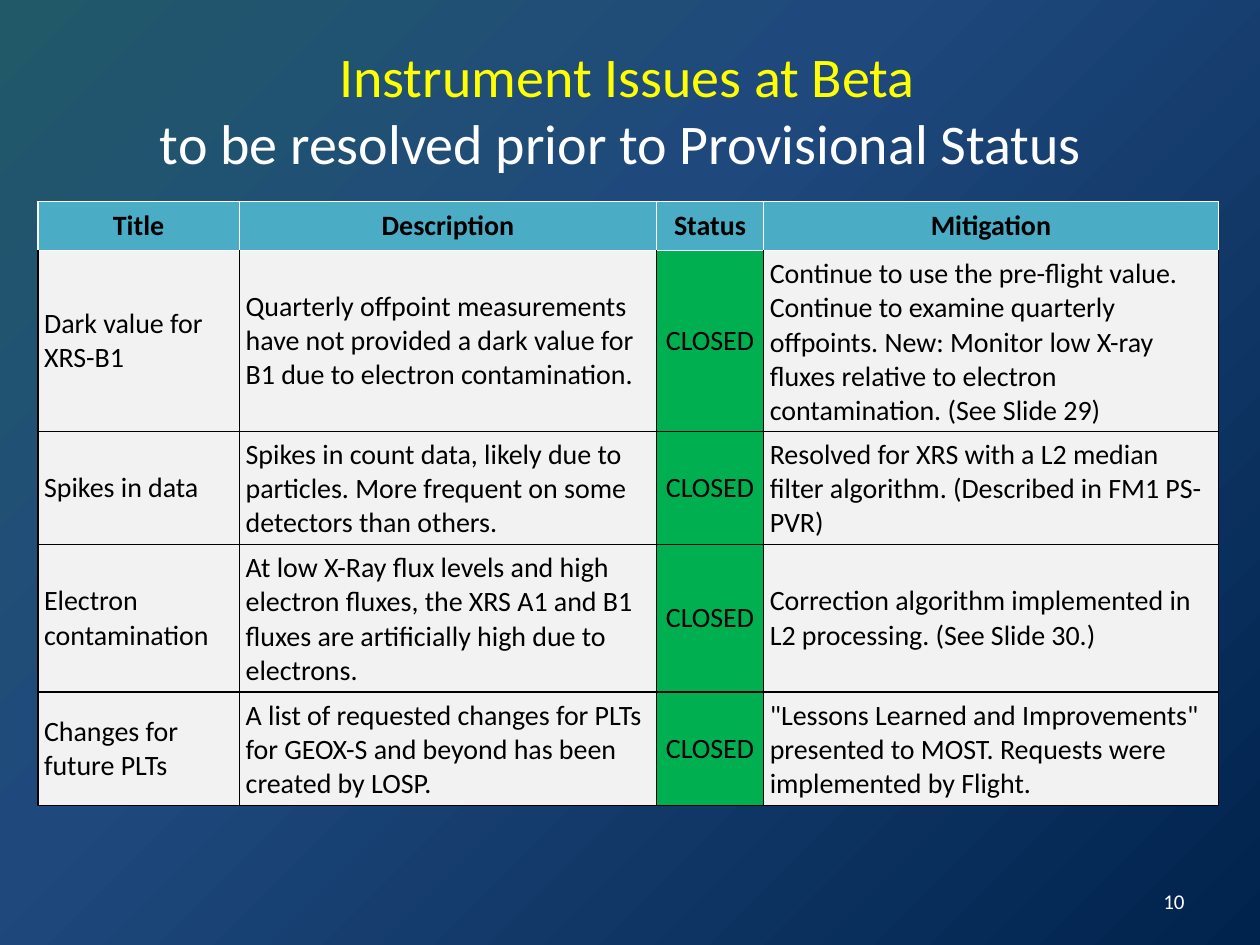
from lxml.etree import SubElement
from pptx import Presentation
from pptx.dml.color import RGBColor
from pptx.enum.text import MSO_ANCHOR, PP_ALIGN
from pptx.oxml.ns import qn
from pptx.util import Inches, Pt

COLORS = {
    "teal": "215968", "blue": "1F497D", "navy": "00234D",
    "yellow": "FFFF00", "white": "FFFFFF", "black": "000000",
    "header": "4BACC6", "body": "F2F2F2", "closed": "00B050",
}
COLUMN_WIDTHS = [16, 33.1, 8.5, 36.1]
ROW_HEIGHTS = [3.9, 14.3, 9, 11.7, 9]
HEADINGS = ["Title", "Description", "Status", "Mitigation"]
STATUS = HEADINGS.index("Status")
ISSUES = [
    ["Dark value for XRS-B1",
     "Quarterly offpoint measurements have not provided a dark value for B1 "
     "due to electron contamination.",
     "CLOSED",
     "Continue to use the pre-flight value. Continue to examine quarterly "
     "offpoints. New: Monitor low X-ray fluxes relative to electron "
     "contamination. (See Slide 29)"],
    ["Spikes in data",
     "Spikes in count data, likely due to particles. More frequent on some "
     "detectors than others.",
     "CLOSED",
     "Resolved for XRS with a L2 median filter algorithm. "
     "(Described in FM1 PS-PVR)"],
    ["Electron contamination",
     "At low X-Ray flux levels and high electron fluxes, the XRS A1 and B1 "
     "fluxes are artificially high due to electrons.",
     "CLOSED",
     "Correction algorithm implemented in L2 processing. (See Slide 30.)"],
    ["Changes for future PLTs",
     "A list of requested changes for PLTs for GEOX-S and beyond has been "
     "created by LOSP.",
     "CLOSED",
     '"Lessons Learned and Improvements" presented to MOST. Requests were '
     "implemented by Flight."],
]


def write(paragraph, text, size=16, color="black", bold=False,
          align=PP_ALIGN.LEFT, font="Calibri"):
    """Write one formatted run into a paragraph."""
    paragraph.alignment = align
    run = paragraph.add_run()
    run.text = text
    run.font.name = font
    run.font.size = Pt(size)
    run.font.bold = bold
    run.font.color.rgb = RGBColor.from_string(COLORS[color])


class IssueSlide:
    """Hold the style and the current slide on a grid of 100 by 75 units."""

    unit = Inches(0.1)
    cell_margin = Inches(0.05)
    border_width = Pt(1)

    def __init__(self, presentation):
        presentation.slide_width = self.span(100)
        presentation.slide_height = self.span(75)
        self.slide = presentation.slides.add_slide(presentation.slide_layouts[6])

    def span(self, units):
        return round(units * self.unit)

    def background(self, stops):
        self.slide.background.fill.gradient()
        gradient = self.slide.element.find(".//" + qn("a:gradFill"))
        for child in list(gradient):
            gradient.remove(child)
        stop_list = SubElement(gradient, qn("a:gsLst"))
        for percent, color in stops:
            stop = SubElement(stop_list, qn("a:gs"), pos=str(percent * 1000))
            SubElement(stop, qn("a:srgbClr"), val=COLORS[color])
        focus = SubElement(gradient, qn("a:path"))
        focus.set("path", "circle")
        SubElement(focus, qn("a:fillToRect"), r="100000", b="100000")

    def text(self, area, lines, **style):
        frame = self.slide.shapes.add_textbox(*map(self.span, area)).text_frame
        frame.word_wrap = True
        frame.vertical_anchor = MSO_ANCHOR.MIDDLE
        for number, (line, color) in enumerate(lines):
            paragraph = frame.add_paragraph() if number else frame.paragraphs[0]
            write(paragraph, line, color=color, **style)

    def borders(self, cell, colors):
        properties = cell._tc.get_or_add_tcPr()
        for side, color in zip("LRTB", colors):
            edge = SubElement(properties, qn(f"a:ln{side}"), w=str(self.border_width))
            fill = SubElement(edge, qn("a:solidFill"))
            SubElement(fill, qn("a:srgbClr"), val=COLORS[color])

    def cell(self, cell, text, fill, borders, **style):
        self.borders(cell, borders)
        cell.fill.solid()
        cell.fill.fore_color.rgb = RGBColor.from_string(COLORS[fill])
        cell.vertical_anchor = MSO_ANCHOR.MIDDLE
        cell.margin_left = cell.margin_right = self.cell_margin
        cell.margin_top = cell.margin_bottom = self.cell_margin
        write(cell.text_frame.paragraphs[0], text, **style)

    def table(self, left, top, widths, heights, headings, records):
        area = map(self.span, (left, top, sum(widths), sum(heights)))
        grid = self.slide.shapes.add_table(len(heights), len(widths), *area).table
        for column, width in zip(grid.columns, widths):
            column.width = self.span(width)
        for row, height in zip(grid.rows, heights):
            row.height = self.span(height)
        for index, heading in enumerate(headings):
            self.cell(grid.cell(0, index), heading, "header", ["white"] * 4,
                      bold=True, align=PP_ALIGN.CENTER)
        for number, record in enumerate(records, 1):
            top_edge = "white" if number == 1 else "black"
            for index, entry in enumerate(record):
                is_status = index == STATUS
                self.cell(grid.cell(number, index), entry,
                          "closed" if is_status else "body",
                          ["black", "black", top_edge, "black"],
                          align=PP_ALIGN.CENTER if is_status else PP_ALIGN.LEFT)


def main():
    presentation = Presentation()
    issues = IssueSlide(presentation)
    issues.background([(0, "teal"), (40, "blue"), (100, "navy")])
    issues.text((71.7, 69.5, 23.3, 4), [("10", "white")],
                size=12, align=PP_ALIGN.RIGHT)
    issues.text((4.8, 3, 90, 11.3),
                [("Instrument Issues at Beta", "yellow"),
                 ("to be resolved prior to Provisional Status ", "white")],
                size=32, align=PP_ALIGN.CENTER)
    issues.table(3, 16, COLUMN_WIDTHS, ROW_HEIGHTS, HEADINGS, ISSUES)
    presentation.save("out.pptx")


if __name__ == "__main__":
    main()
